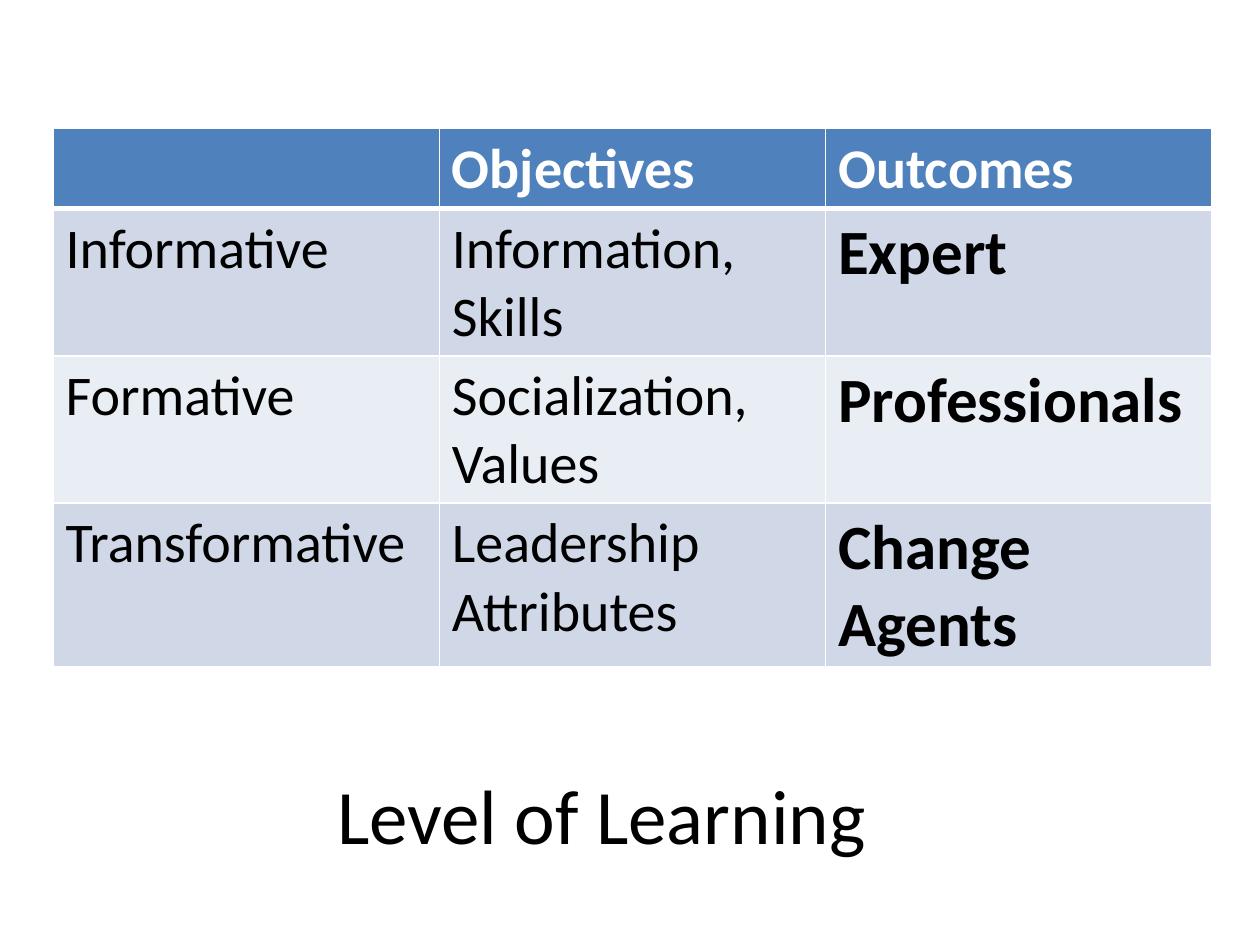
"""Build the Level of Learning slide: a table of objectives and outcomes over a title."""
from dataclasses import dataclass

import pptx
import pptx.dml.color
import pptx.enum.text
import pptx.oxml
import pptx.oxml.ns
import pptx.util
from pptx.util import Inches


@dataclass(frozen=True)
class Theme:
    font: str = "Calibri"
    dark: str = "000000"
    light: str = "FFFFFF"
    header: str = "4F81BD"
    bands: tuple[str, str] = ("D0D8E8", "E9EDF4")
    title_size: int = 44
    body_size: int = 32
    outcome_size: int = 36
    rule: int = 1
    header_rule: int = 3


@dataclass(frozen=True)
class Level:
    name: str
    objectives: str
    outcome: str
    height: float


THEME = Theme()
HEADER = Level("", "Objectives", "Outcomes", 0.62)
LEVELS = [
    Level("Informative", "Information, Skills", "Expert", 1.17),
    Level("Formative", "Socialization, Values", "Professionals", 1.17),
    Level("Transformative", "Leadership Attributes", "Change Agents", 1.29),
]


def add_run(p, text: str, size: int, color: str, bold: bool = False) -> None:
    r = p.add_run()
    r.text = text
    r.font.name = THEME.font
    r.font.size = pptx.util.Pt(size)
    r.font.bold = bold
    r.font.color.rgb = pptx.dml.color.RGBColor.from_string(color)


def set_borders(cell, top: int, bottom: int) -> None:
    tc_pr = cell._tc.get_or_add_tcPr()
    widths = {"L": THEME.rule, "R": THEME.rule, "T": top, "B": bottom}
    for i, (side, width) in enumerate(widths.items()):
        ln = pptx.oxml.parse_xml(
            f'<a:ln{side} {pptx.oxml.ns.nsdecls("a")} w="{pptx.util.Pt(width)}">'
            f'<a:solidFill><a:srgbClr val="{THEME.light}"/></a:solidFill></a:ln{side}>'
        )
        tc_pr.insert(i, ln)


def fill_row(table, i: int, level: Level) -> None:
    is_header = i == 0
    fill = THEME.header if is_header else THEME.bands[(i - 1) % 2]
    color = THEME.light if is_header else THEME.dark
    top = THEME.header_rule if i == 1 else THEME.rule
    bottom = THEME.header_rule if is_header else THEME.rule
    table.rows[i].height = Inches(level.height)
    for j, text in enumerate((level.name, level.objectives, level.outcome)):
        cell = table.cell(i, j)
        cell.fill.solid()
        cell.fill.fore_color.rgb = pptx.dml.color.RGBColor.from_string(fill)
        set_borders(cell, top, bottom)
        is_outcome = j == 2 and not is_header
        size = THEME.outcome_size if is_outcome else THEME.body_size
        if text:
            add_run(cell.text_frame.paragraphs[0], text, size, color, is_header or is_outcome)


def add_title(s, text: str) -> None:
    sp = s.shapes.title
    sp.left, sp.top, sp.width, sp.height = map(Inches, (2.55, 6.04, 4.45, 0.84))
    tf = sp.text_frame
    tf.word_wrap = False
    tf.auto_size = pptx.enum.text.MSO_AUTO_SIZE.SHAPE_TO_FIT_TEXT
    p = tf.paragraphs[0]
    p.alignment = pptx.enum.text.PP_ALIGN.CENTER
    add_run(p, text, THEME.title_size, THEME.dark)


def add_levels(s, rows: list[Level]) -> None:
    height = sum(row.height for row in rows)
    table = s.shapes.add_table(
        len(rows), 3, Inches(0.42), Inches(1.02), Inches(9.2), Inches(height)
    ).table
    for i, row in enumerate(rows):
        fill_row(table, i, row)


def main() -> None:
    prs = pptx.Presentation()
    prs.slide_width, prs.slide_height = Inches(10), Inches(7.5)
    s = prs.slides.add_slide(prs.slide_layouts[5])
    add_title(s, "Level of Learning")
    add_levels(s, [HEADER, *LEVELS])
    prs.save("out.pptx")


if __name__ == "__main__":
    main()
